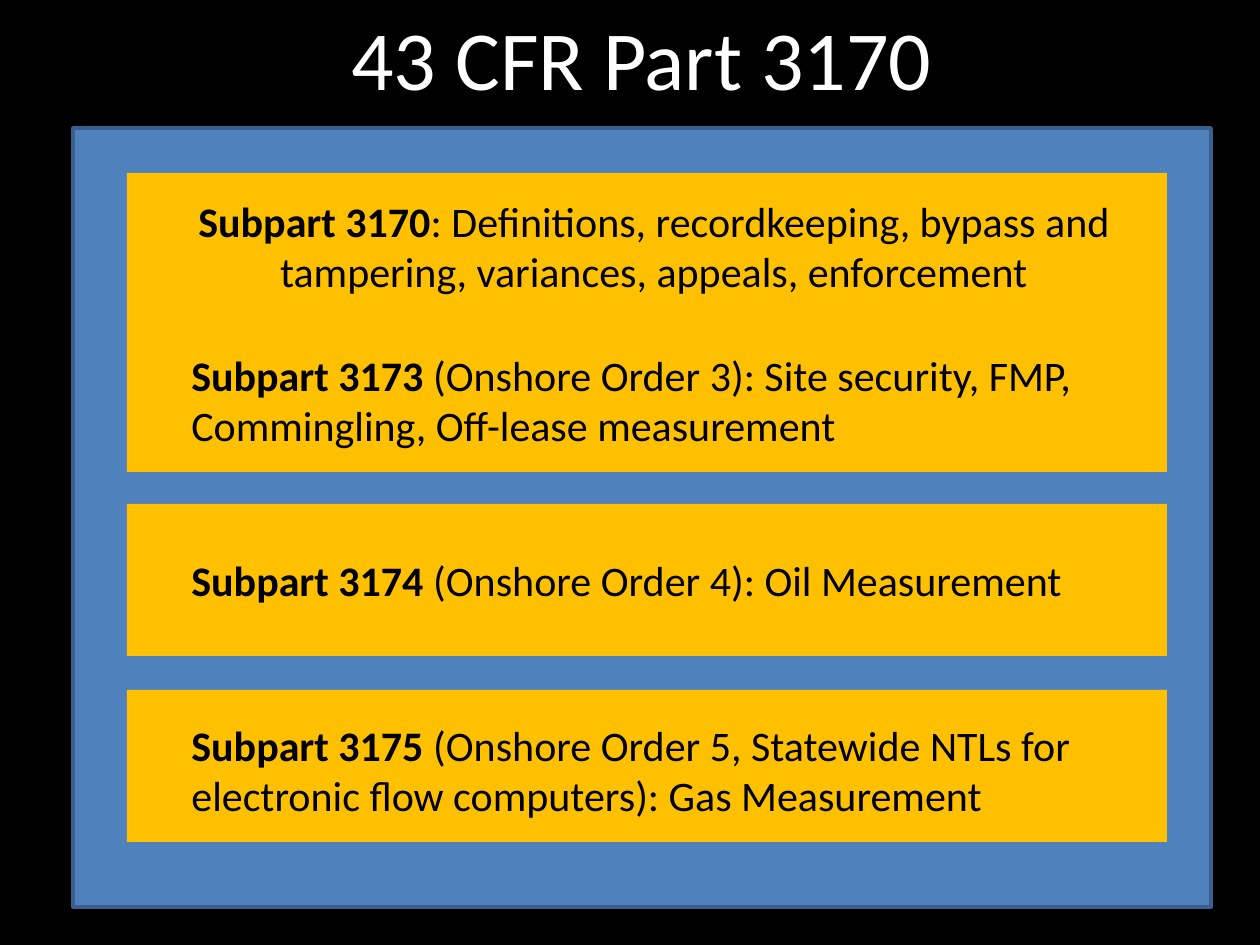
from dataclasses import dataclass

from pptx import Presentation
from pptx.dml.color import RGBColor
from pptx.enum.shapes import MSO_SHAPE as Shape
from pptx.enum.text import MSO_ANCHOR as Anchor, MSO_AUTO_SIZE as AutoSize, PP_ALIGN as Align
from pptx.slide import Slide
from pptx.text.text import TextFrame
from pptx.util import Emu, Pt

EMU_PER_PX = 914400 / 126
COLORS = {
    "background": "000000",
    "title": "FFFFFF",
    "panel": "4F81BD",
    "panel_line": "3A5F8C",
    "bar": "FFC000",
    "text": "000000",
}
FONT = "Calibri"
BAR_LEFT, BAR_WIDTH = 127, 1040


@dataclass(frozen=True)
class Box:
    left: int
    top: int
    width: int
    height: int

    def emu(self) -> tuple[Emu, ...]:
        return tuple(px(n) for n in (self.left, self.top, self.width, self.height))


@dataclass(frozen=True)
class Subpart:
    name: str
    topic: str
    bar_top: int
    bar_height: int
    text_box: Box
    centered: bool = False


PANEL = Box(73, 128, 1138, 779)
TITLE = Box(339, 0, 633, 115)
SUBPARTS = [
    Subpart("Subpart 3174", " (Onshore Order 4): Oil Measurement",
            504, 152, Box(179, 548, 937, 63)),
    Subpart("Subpart 3175",
            " (Onshore Order 5, Statewide NTLs for electronic flow computers): Gas Measurement",
            690, 152, Box(179, 713, 937, 115)),
    Subpart("Subpart 3173",
            " (Onshore Order 3): Site security, FMP, Commingling, Off-lease measurement",
            325, 147, Box(179, 343, 971, 115)),
    Subpart("Subpart 3170",
            ": Definitions, recordkeeping, bypass and tampering, variances, appeals, enforcement",
            173, 152, Box(108, 195, 1092, 101), centered=True),
]


def px(length: int) -> Emu:
    return Emu(round(length * EMU_PER_PX))


def color(name: str) -> RGBColor:
    return RGBColor.from_string(COLORS[name])


def add_rectangle(slide: Slide, box: Box, fill: str, line: str | None = None) -> None:
    shape = slide.shapes.add_shape(Shape.RECTANGLE, *box.emu())
    shape.shadow.inherit = False
    shape.fill.solid()
    shape.fill.fore_color.rgb = color(fill)
    if line:
        shape.line.color.rgb = color(line)
        shape.line.width = Pt(2)
    else:
        shape.line.fill.background()


def add_text(slide: Slide, box: Box, size: int, ink: str) -> TextFrame:
    """Add an empty wrapping text box with its paragraph font set."""
    frame = slide.shapes.add_textbox(*box.emu()).text_frame
    frame.word_wrap = True
    frame.auto_size = AutoSize.SHAPE_TO_FIT_TEXT
    font = frame.paragraphs[0].font
    font.name, font.size = FONT, Pt(size)
    font.color.rgb = color(ink)
    return frame


def add_subpart(slide: Slide, subpart: Subpart) -> None:
    add_rectangle(slide, Box(BAR_LEFT, subpart.bar_top, BAR_WIDTH, subpart.bar_height), "bar")
    frame = add_text(slide, subpart.text_box, 24, "text")
    paragraph = frame.paragraphs[0]
    if subpart.centered:
        frame.auto_size = AutoSize.NONE
        frame.vertical_anchor = Anchor.MIDDLE
        paragraph.alignment = Align.CENTER
    for text, bold in ((subpart.name, True), (subpart.topic, False)):
        run = paragraph.add_run()
        run.text = text
        run.font.bold = bold


def main() -> None:
    presentation = Presentation()
    presentation.slide_width, presentation.slide_height = px(1260), px(945)
    slide = presentation.slides.add_slide(presentation.slide_layouts[6])
    slide.background.fill.solid()
    slide.background.fill.fore_color.rgb = color("background")

    add_rectangle(slide, PANEL, "panel", "panel_line")
    title = add_text(slide, TITLE, 48, "title")
    title.paragraphs[0].add_run().text = "43 CFR Part 3170"
    for subpart in SUBPARTS:
        add_subpart(slide, subpart)
    presentation.save("out.pptx")


if __name__ == "__main__":
    main()
